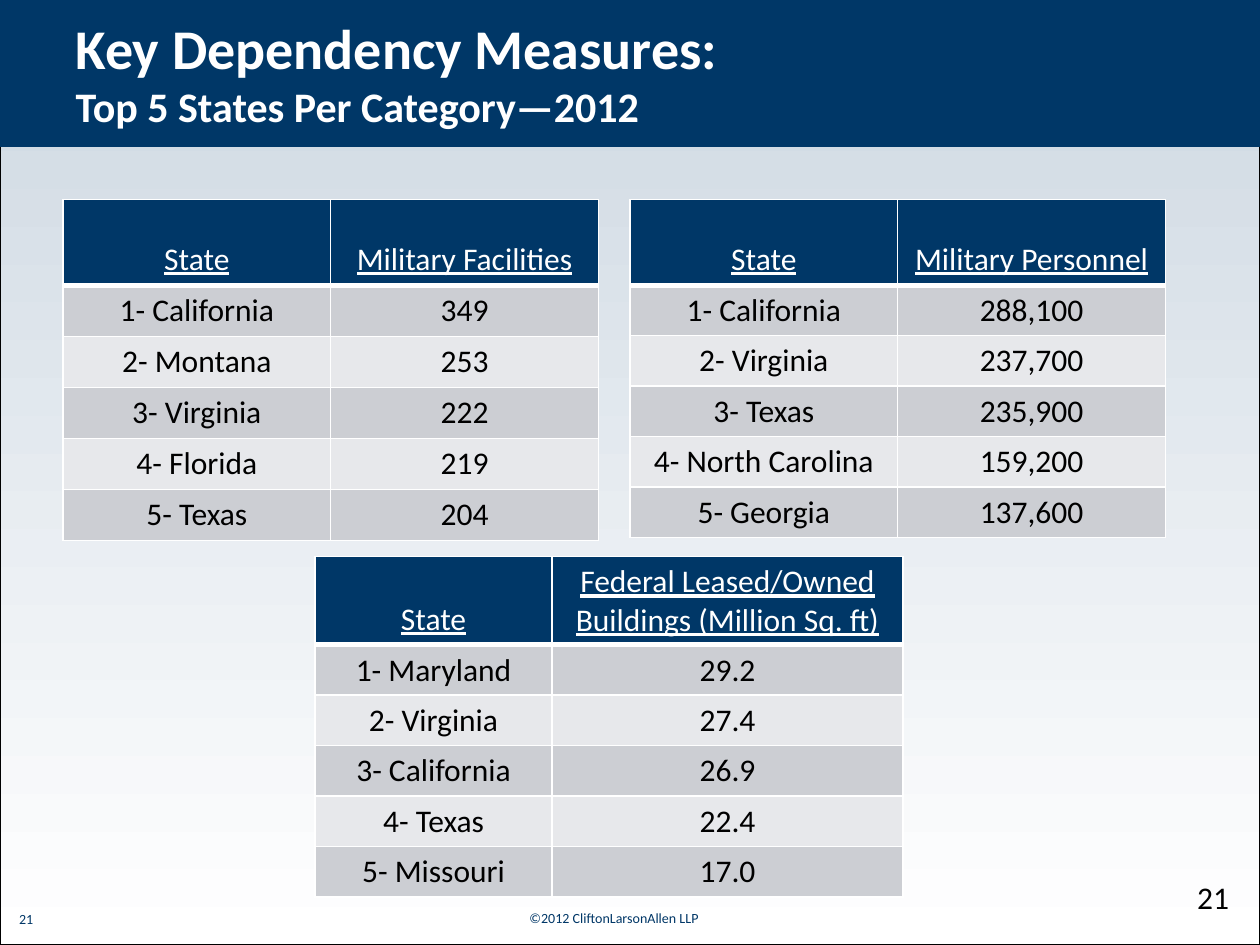
from lxml.etree import SubElement
from pptx import Presentation
from pptx.dml.color import RGBColor
from pptx.enum.shapes import MSO_SHAPE as Shape
from pptx.enum.text import MSO_ANCHOR as Anchor, MSO_AUTO_SIZE as AutoSize, PP_ALIGN as Align
from pptx.oxml.ns import qn
from pptx.util import Pt

NAVY, WHITE, BLACK = "003767", "FFFFFF", "000000"
STRIPES = "CCCED3", "E7E8EB"


def rgb(value):
    return RGBColor.from_string(value)


def write(paragraph, text, size=18, color=BLACK, bold=False, underline=False,
          align=Align.LEFT):
    paragraph.alignment = align
    run = paragraph.add_run()
    run.text = text
    font = run.font
    font.name, font.size, font.color.rgb = "Calibri", Pt(size), rgb(color)
    font.bold, font.underline = bold, underline


def set_borders(cell, color, bottom=1):
    """Draw all four cell edges; they must precede the fill in the XML."""
    properties = cell._tc.get_or_add_tcPr()
    for edge, width in (("L", 1), ("R", 1), ("T", 1), ("B", bottom)):
        line = SubElement(properties, qn(f"a:ln{edge}"), w=str(Pt(width)))
        fill = SubElement(line, qn("a:solidFill"))
        SubElement(fill, qn("a:srgbClr"), val=color)


class StateSlide:
    def __init__(self, deck):
        self.slide = deck.slides.add_slide(deck.slide_layouts[5])
        self.shapes = self.slide.shapes

    def background(self, top, bottom):
        fill = self.slide.background.fill
        fill.gradient()
        fill.gradient_angle = 270
        for stop, color in zip(fill.gradient_stops, (top, bottom)):
            stop.color.rgb = rgb(color)

    def rectangle(self, left, top, width, height, fill=None, line=None):
        box = self.shapes.add_shape(
            Shape.RECTANGLE, Pt(left), Pt(top), Pt(width), Pt(height))
        box.shadow.inherit = False
        if fill:
            box.fill.solid()
            box.fill.fore_color.rgb = rgb(fill)
        else:
            box.fill.background()
        if line:
            box.line.color.rgb = rgb(line)
            box.line.width = Pt(0.75)
        else:
            box.line.fill.background()

    def title(self, heading, subheading):
        title = self.shapes.title
        self.shapes._spTree.append(title._element)  # in front of the band
        title.left, title.top, title.width, title.height = Pt(36), Pt(24), Pt(648), Pt(54)
        frame = title.text_frame
        frame.word_wrap, frame.auto_size = True, AutoSize.NONE
        frame.vertical_anchor = Anchor.MIDDLE
        frame.margin_bottom = Pt(23)
        write(frame.paragraphs[0], heading, size=32, color=WHITE, bold=True)
        second = frame.add_paragraph()
        second.space_before = Pt(0)
        write(second, subheading, size=24, color=WHITE, bold=True)

    def label(self, text, left, top, width, height, **style):
        box = self.shapes.add_textbox(Pt(left), Pt(top), Pt(width), Pt(height))
        box.text_frame.word_wrap = True
        write(box.text_frame.paragraphs[0], text, **style)

    def ranking(self, measure, ranks, left, top, widths, header=49, row=28.8):
        rows = [("State", measure)]
        rows += [(f"{place}- {state}", value)
                 for place, (state, value) in enumerate(ranks, 1)]
        table = self.shapes.add_table(
            len(rows), 2, Pt(left), Pt(top), Pt(sum(widths)),
            Pt(header + row * len(ranks))).table
        for column, width in zip(table.columns, widths):
            column.width = Pt(width)
        for r, texts in enumerate(rows):
            is_header = r == 0
            table.rows[r].height = Pt(header if is_header else row)
            for c, text in enumerate(texts):
                cell = table.cell(r, c)
                set_borders(cell, WHITE, bottom=3 if is_header else 1)
                cell.fill.solid()
                cell.fill.fore_color.rgb = rgb(NAVY if is_header else STRIPES[(r - 1) % 2])
                cell.vertical_anchor = Anchor.BOTTOM if is_header else Anchor.TOP
                write(cell.text_frame.paragraphs[0], text, underline=is_header,
                      color=WHITE if is_header else BLACK, align=Align.CENTER)


def main():
    deck = Presentation()
    deck.slide_width, deck.slide_height = Pt(720), Pt(540)
    page = StateSlide(deck)
    page.background("CCD7E1", WHITE)
    page.rectangle(0, 0, 720, 540, line=BLACK)
    small = dict(size=8, color=NAVY, align=Align.CENTER)
    page.label("©2012 CliftonLarsonAllen LLP", 294, 516, 114, 17, **small)
    page.label("21", 0, 517, 30, 17, **small)
    page.rectangle(0, 0, 720, 84, fill=NAVY)
    page.title("Key Dependency Measures:", "Top 5 States Per Category—2012")

    facilities = [("California", "349"), ("Montana", "253"), ("Virginia", "222"),
                  ("Florida", "219"), ("Texas", "204")]
    personnel = [("California", "288,100"), ("Virginia", "237,700"), ("Texas", "235,900"),
                 ("North Carolina", "159,200"), ("Georgia", "137,600")]
    buildings = [("Maryland", "29.2"), ("Virginia", "27.4"), ("California", "26.9"),
                 ("Texas", "22.4"), ("Missouri", "17.0")]
    page.ranking("Military Facilities", facilities, 36, 114, (153, 153))
    page.label("21", 677, 498, 40, 29)
    page.ranking("Military Personnel", personnel, 360, 114, (153, 153))
    page.ranking("Federal Leased/Owned Buildings (Million Sq. ft)", buildings,
                 180, 318, (135.5, 200.5), header=38, row=28)
    deck.save("out.pptx")


if __name__ == "__main__":
    main()
